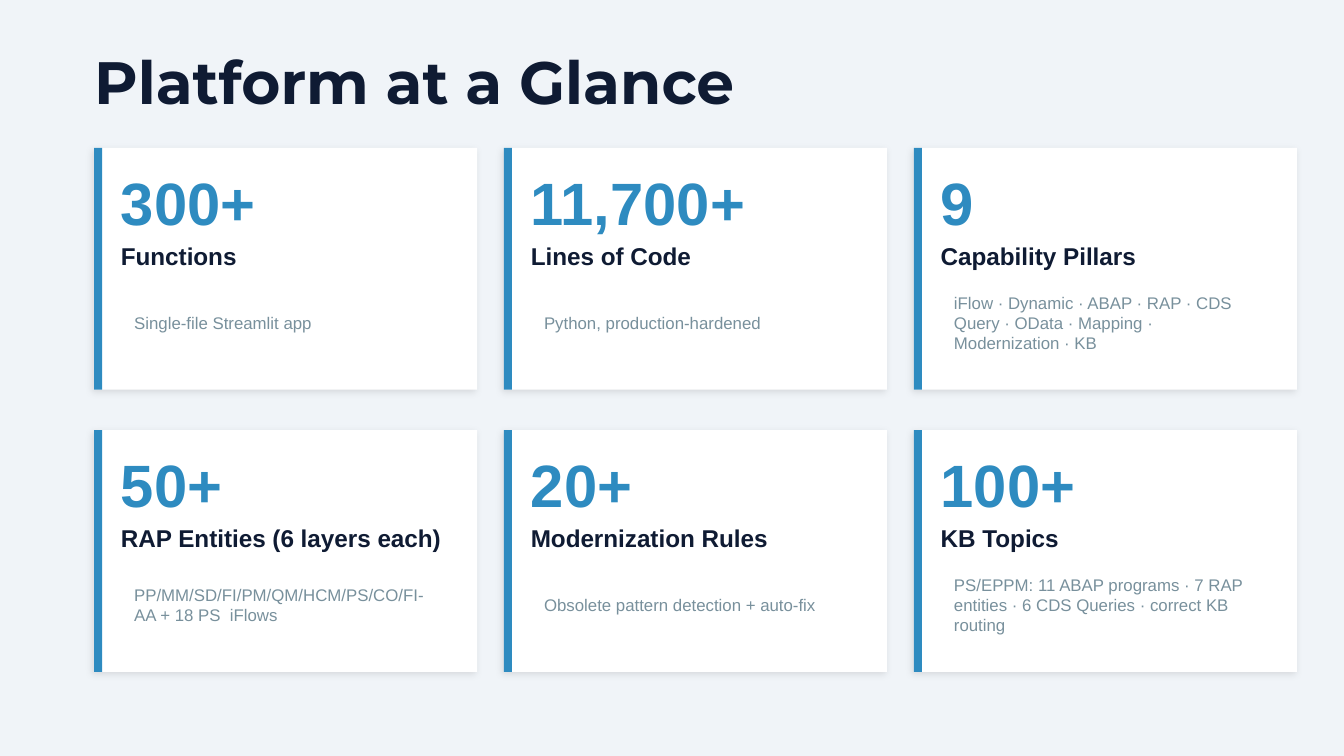
from lxml.etree import SubElement
from pptx import Presentation
from pptx.dml.color import RGBColor
from pptx.enum.shapes import MSO_SHAPE
from pptx.enum.text import MSO_ANCHOR, MSO_AUTO_SIZE, PP_ALIGN
from pptx.oxml.ns import qn
from pptx.util import Emu, Pt

PX = 4572
BACKGROUND, WHITE, NAVY, BLUE, GREY = "F0F4F8", "FFFFFF", "0F1B33", "2E8BC0", "78909C"
TITLE = {"name": "Montserrat", "size": Pt(32), "bold": True, "color": NAVY}
FIGURE = {"name": "Arial", "size": Pt(32), "bold": True, "color": BLUE}
LABEL = {"name": "Arial", "size": Pt(13), "bold": True, "color": NAVY}
DETAIL = {"name": "Arial", "size": Pt(9), "bold": False, "color": GREY}

COLUMNS = 3
CARD_W, CARD_H = 570, 360
LEFT, TOP = 140, 220
STEP_X, STEP_Y = 610, 420
CARDS = [
    ("300+", "Functions", ["Single-file Streamlit app"]),
    ("11,700+", "Lines of Code", ["Python, production-hardened"]),
    ("9", "Capability Pillars",
     ["iFlow · Dynamic · ABAP · RAP · CDS", "Query · OData · Mapping · Modernization · KB"]),
    ("50+", "RAP Entities (6 layers each)", ["PP/MM/SD/FI/PM/QM/HCM/PS/CO/FI-AA + 18 PS  iFlows"]),
    ("20+", "Modernization Rules", ["Obsolete pattern detection + auto-fix"]),
    ("100+", "KB Topics",
     ["PS/EPPM: 11 ABAP programs · 7 RAP", "entities · 6 CDS Queries · correct KB routing"]),
]


def px(*lengths):
    """Turn px lengths into EMU."""
    return [Emu(length * PX) for length in lengths]


def rgb(color):
    """Turn a hex string into a colour."""
    return RGBColor.from_string(color)


def write(s, lines, style, inset=True):
    """Fill a shape with left-aligned, vertically centred paragraphs."""
    tf = s.text_frame
    frame = {"word_wrap": True, "auto_size": MSO_AUTO_SIZE.NONE, "vertical_anchor": MSO_ANCHOR.MIDDLE}
    if not inset:
        frame.update(dict.fromkeys(("margin_left", "margin_top", "margin_right", "margin_bottom"), 0))
    for name, value in frame.items():
        setattr(tf, name, value)
    for i, line in enumerate(lines):
        p = tf.add_paragraph() if i else tf.paragraphs[0]
        p.alignment = PP_ALIGN.LEFT
        r = p.add_run()
        r.text = line
        for name, value in style.items():
            if name == "color":
                r.font.color.rgb = rgb(value)
            else:
                setattr(r.font, name, value)


def add_title(slide, text):
    """Place and format the title placeholder."""
    s = slide.shapes.title
    s.left, s.top, s.width, s.height = px(140, 60, 1600, 120)
    write(s, [text], TITLE, inset=False)


def add_text(slide, box, lines, style, inset=True):
    """Add a text box."""
    write(slide.shapes.add_textbox(*px(*box)), lines, style, inset)


def add_rect(slide, box, color):
    """Add a plain filled rectangle."""
    s = slide.shapes.add_shape(MSO_SHAPE.RECTANGLE, *px(*box))
    s.shadow.inherit = False
    s.fill.solid()
    s.fill.fore_color.rgb = rgb(color)
    s.line.fill.background()
    return s


def add_shadow(s):
    """Give a shape a soft, faint black shadow."""
    effects = s._element.spPr.find(qn("a:effectLst"))
    shadow = SubElement(effects, qn("a:outerShdw"), blurRad=str(Pt(4)), dist=str(Pt(1.5)),
                        dir="8100000", algn="bl", rotWithShape="0")
    color = SubElement(shadow, qn("a:srgbClr"), val="000000")
    SubElement(color, qn("a:alpha"), val="10000")


def add_card(slide, x, y, figure, label, details):
    """Add a card with an accent bar, a figure, a label and details."""
    add_shadow(add_rect(slide, (x, y, CARD_W, CARD_H), WHITE))
    add_rect(slide, (x, y, 12, CARD_H), BLUE)
    add_text(slide, (x + 40, y + 20, 480, 120), [figure], FIGURE, inset=False)
    add_text(slide, (x + 40, y + 130, 480, 60), [label], LABEL, inset=False)
    add_text(slide, (x + 40, y + 200, 480, 120), details, DETAIL)


def main():
    """Build the slide and save it."""
    prs = Presentation()
    prs.slide_width, prs.slide_height = px(2000, 1125)
    slide = prs.slides.add_slide(prs.slide_layouts[5])
    slide.background.fill.solid()
    slide.background.fill.fore_color.rgb = rgb(BACKGROUND)
    add_title(slide, "Platform at a Glance")
    for i, card in enumerate(CARDS):
        row, column = divmod(i, COLUMNS)
        add_card(slide, LEFT + column * STEP_X, TOP + row * STEP_Y, *card)
    prs.save("out.pptx")


if __name__ == "__main__":
    main()
